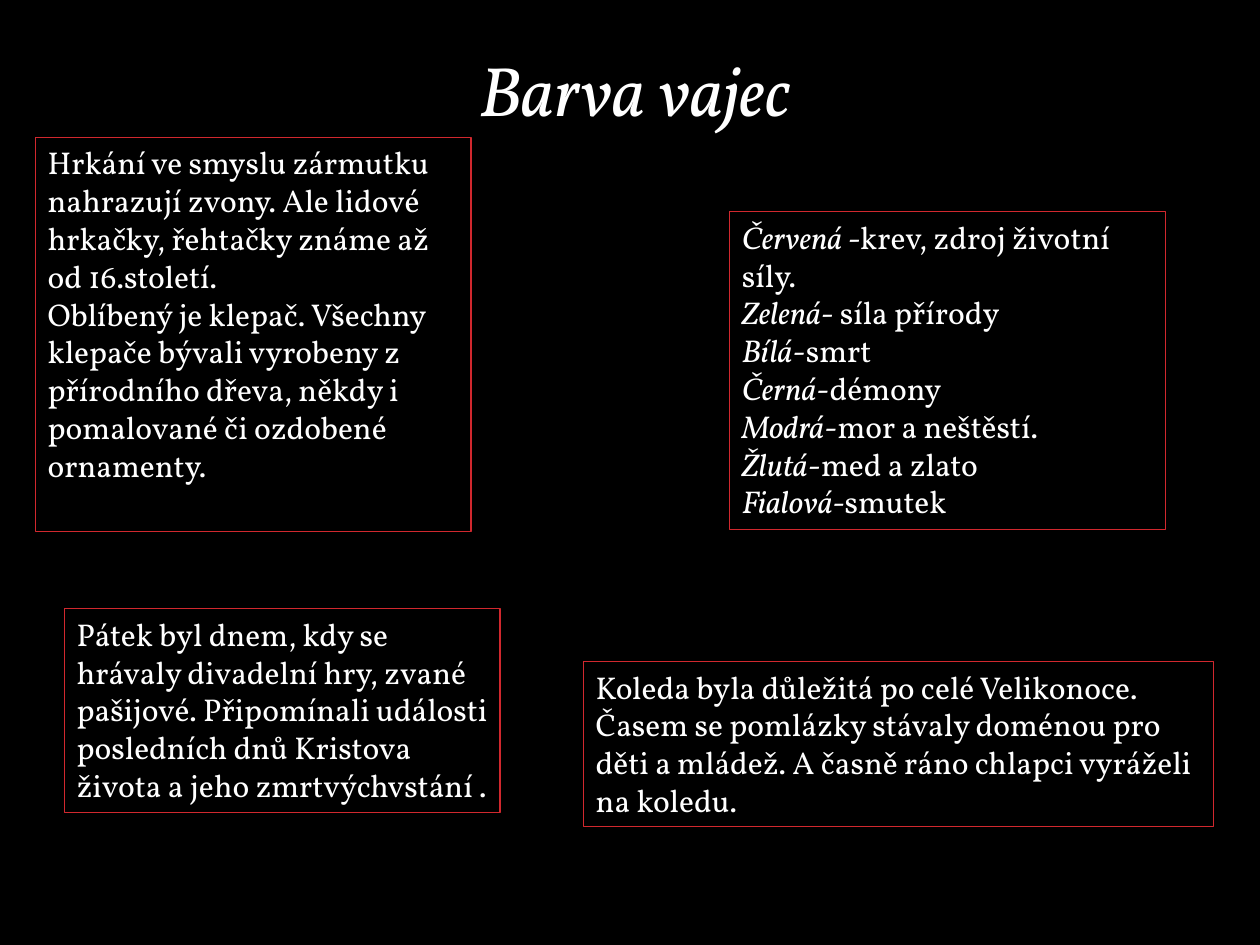
"""Build the slide on Easter egg colours and customs."""
from pptx import Presentation
from pptx.dml.color import RGBColor
from pptx.enum.shapes import MSO_SHAPE
from pptx.enum.text import MSO_ANCHOR, PP_ALIGN
from pptx.util import Inches, Pt

BLACK = RGBColor(0x00, 0x00, 0x00)
WHITE = RGBColor(0xFF, 0xFF, 0xFF)
RED = RGBColor(0xD1, 0x28, 0x2E)
FONT = "Vollkorn"

TITLE = "Barva vajec"
RATTLES = [
    "Hrkání ve smyslu zármutku nahrazují zvony. Ale lidové hrkačky, řehtačky známe až od 16.století.",
    "Oblíbený je klepač. Všechny klepače bývali vyrobeny z přírodního dřeva, někdy i pomalované či ozdobené ornamenty.",
]
EGG_COLOURS = [
    ("Červená", " -krev, zdroj životní síly."),
    ("Zelená", "- síla přírody"),
    ("Bílá", "-smrt"),
    ("Černá", "-démony"),
    ("Modrá", "-mor a neštěstí."),
    ("Žlutá", "-med a zlato"),
    ("Fialová-", "smutek"),
]
FRIDAY = (
    "Pátek byl dnem, kdy se hrávaly divadelní hry, zvané pašijové. "
    "Připomínali události posledních dnů Kristova života a jeho zmrtvýchvstání ."
)
CAROL = (
    "Koleda byla důležitá po celé Velikonoce. Časem se pomlázky stávaly doménou "
    "pro děti a mládež. A časně ráno chlapci vyráželi na koledu."
)

TITLE_AREA = (13.8, 4.27, 73.2, 32.27)
NOTE_WIDTH = 34.6
NOTES = [
    ((2.8, 14.53, NOTE_WIDTH, 41.73), [[(text, False)] for text in RATTLES]),
    ((57.9, 22.4, NOTE_WIDTH, 33.6),
     [[(colour, True), (meaning, False)] for colour, meaning in EGG_COLOURS]),
    ((5.1, 64.4, NOTE_WIDTH, 21.6), [[(FRIDAY, False)]]),
    ((46.3, 70, 50, 17.47), [[(CAROL, False)]]),
]


def place(prs, area):
    """Turn percentages of the slide into lengths."""
    sides = (prs.slide_width, prs.slide_height) * 2
    return [round(side * share / 100) for side, share in zip(sides, area)]


def write(shape, paragraphs, size, alignment):
    """Fill a shape with paragraphs of (text, italic) runs."""
    frame = shape.text_frame
    frame.word_wrap = True
    frame.vertical_anchor = MSO_ANCHOR.TOP
    for index, runs in enumerate(paragraphs):
        paragraph = frame.add_paragraph() if index else frame.paragraphs[0]
        paragraph.alignment = alignment
        for text, italic in runs:
            run = paragraph.add_run()
            run.text = text
            run.font.name = FONT
            run.font.size = Pt(size)
            run.font.italic = italic
            run.font.color.rgb = WHITE


def main():
    """Lay out the title and the outlined notes."""
    prs = Presentation()
    prs.slide_width, prs.slide_height = Inches(10), Inches(7.5)
    slide = prs.slides.add_slide(prs.slide_layouts[6])
    slide.background.fill.solid()
    slide.background.fill.fore_color.rgb = BLACK

    title = slide.shapes.add_textbox(*place(prs, TITLE_AREA))
    write(title, [[(TITLE, True)]], 40, PP_ALIGN.CENTER)

    for area, paragraphs in NOTES:
        note = slide.shapes.add_shape(MSO_SHAPE.RECTANGLE, *place(prs, area))
        note.shadow.inherit = False
        note.fill.background()
        note.line.color.rgb = RED
        note.line.width = Pt(0.75)
        write(note, paragraphs, 18, PP_ALIGN.LEFT)

    prs.save("out.pptx")


if __name__ == "__main__":
    main()
